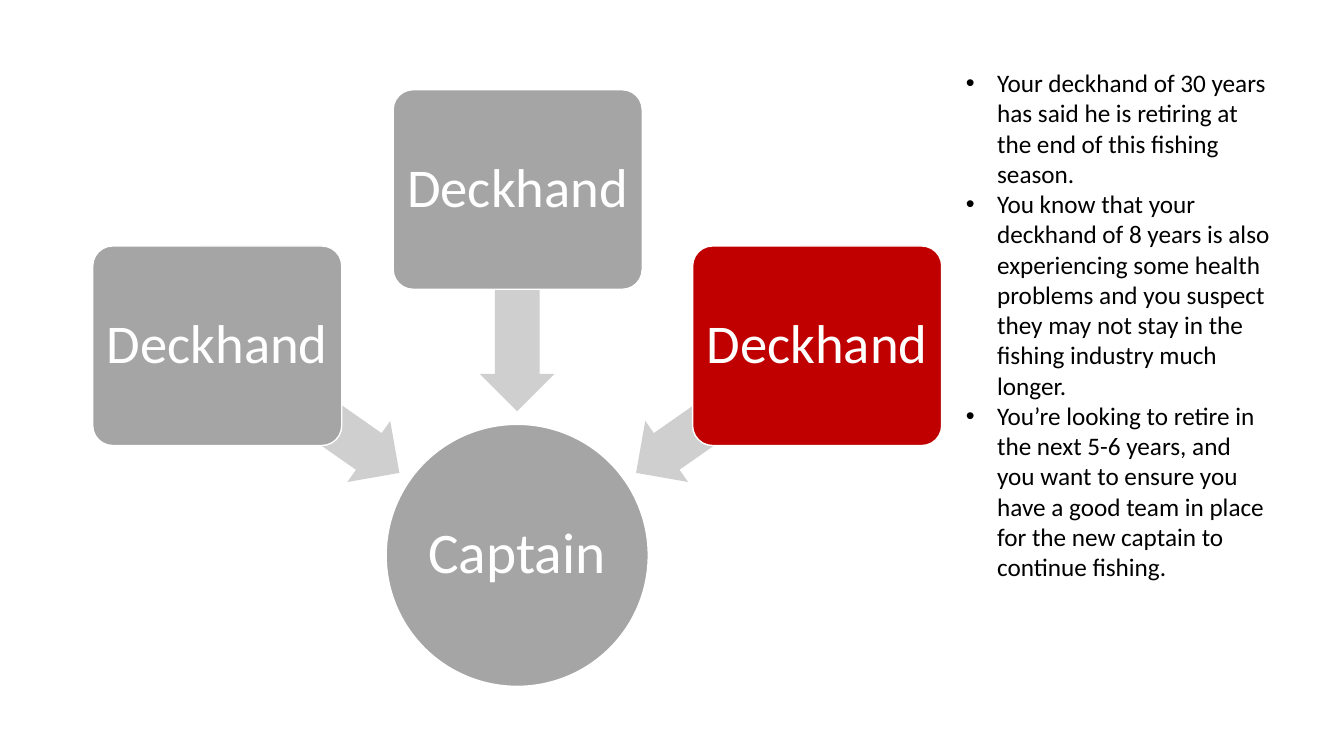
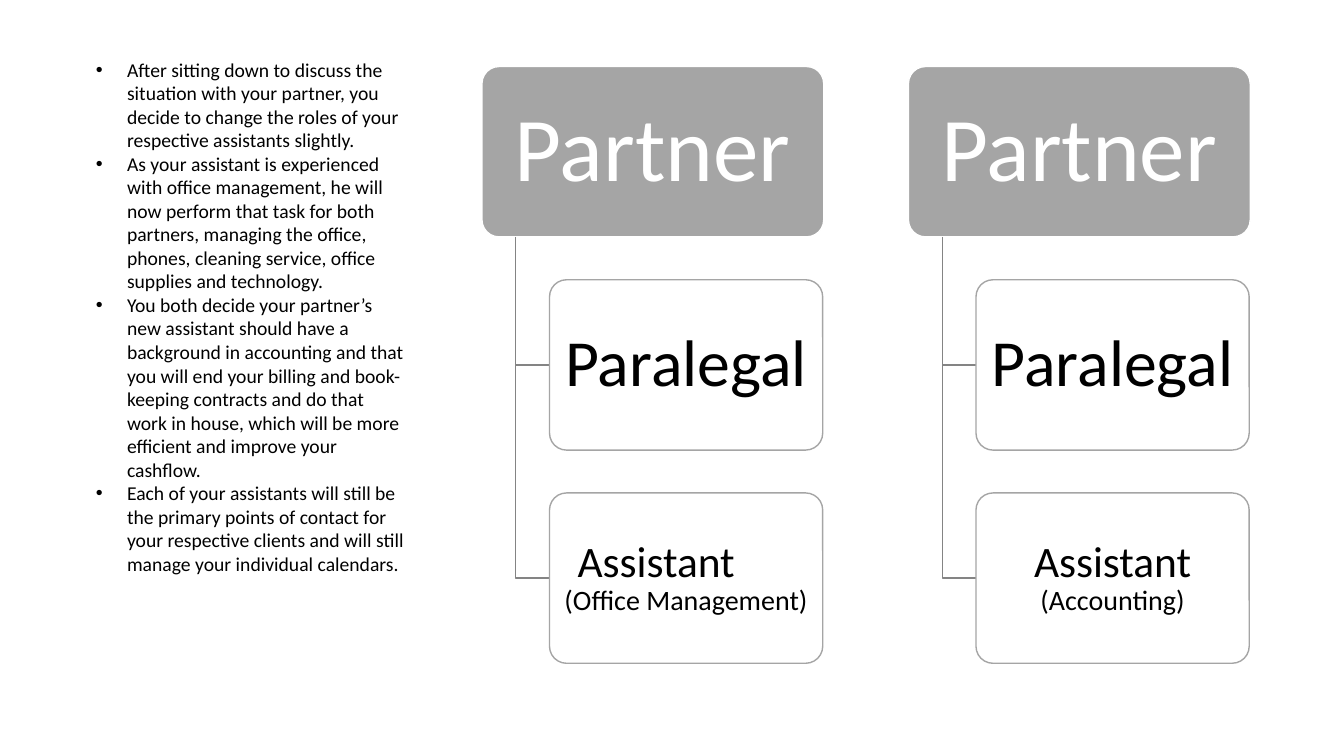
from pptx import Presentation
from pptx.dml.color import RGBColor
from pptx.enum.shapes import MSO_SHAPE
from pptx.enum.text import MSO_ANCHOR, MSO_AUTO_SIZE, PP_ALIGN
from pptx.util import Inches, Pt

COLORS = {
    "gray": "A5A5A5",
    "arrow": "CFCFCF",
    "red": "C00000",
    "elbow": "848484",
    "white": "FFFFFF",
    "black": "000000",
}
FONT = "Calibri"

deck = Presentation()
deck.slide_width = Inches(13.33)
deck.slide_height = Inches(7.5)


def add_list_page(frame, size, items):
    page = deck.slides.add_slide(deck.slide_layouts[1])
    title = page.shapes.title.element
    title.getparent().remove(title)
    body = page.placeholders[1]
    body.left, body.top, body.width, body.height = [Inches(v) for v in frame]
    body.text_frame.auto_size = MSO_AUTO_SIZE.NONE
    for index, item in enumerate(items):
        para = body.text_frame.paragraphs[0] if index == 0 else body.text_frame.add_paragraph()
        para.space_before = Pt(0)
        properties = para._p.get_or_add_pPr()
        properties.set("marL", str(Inches(0.31)))
        properties.set("indent", str(-Inches(0.31)))
        span = para.add_run()
        span.text = item
        span.font.name = FONT
        span.font.size = Pt(size)
        span.font.color.rgb = RGBColor.from_string(COLORS["black"])
    return page


def add_box(page, kind, frame, fill, line=None, lines=(), color="white"):
    box = page.shapes.add_shape(kind, *[Inches(v) for v in frame])
    box.shadow.inherit = False
    box.fill.solid()
    box.fill.fore_color.rgb = RGBColor.from_string(COLORS[fill])
    if line:
        box.line.color.rgb = RGBColor.from_string(COLORS[line])
        box.line.width = Pt(1)
    else:
        box.line.fill.background()
    if kind == MSO_SHAPE.ROUNDED_RECTANGLE:
        box.adjustments[0] = 0.1
    text = box.text_frame
    text.word_wrap = True
    text.vertical_anchor = MSO_ANCHOR.MIDDLE
    text.margin_left = text.margin_right = text.margin_top = text.margin_bottom = Inches(0.02)
    for index, (words, size) in enumerate(lines):
        para = text.paragraphs[0] if index == 0 else text.add_paragraph()
        para.alignment = PP_ALIGN.CENTER
        para.line_spacing = 0.9
        span = para.add_run()
        span.text = words
        span.font.name = FONT
        span.font.size = Pt(size)
        span.font.color.rgb = RGBColor.from_string(COLORS[color])
    return box


crew_page = add_list_page((9.48, 0.62, 3.22, 5.55), 18, [
    "Your deckhand of 30 years has said he is retiring at the end of this fishing season.",
    "You know that your deckhand of 8 years is also experiencing some health problems and you "
    "suspect they may not stay in the fishing industry much longer.",
    "You’re looking to retire in the next 5-6 years, and you want to ensure you have a good team "
    "in place for the new captain to continue fishing.",
])
add_box(crew_page, MSO_SHAPE.OVAL, (3.83, 4.21, 2.6, 2.6), "gray", "white", [("Captain", 41)])

crew = [
    (0.92, 2.44, "gray", 1.96, 3.69, 215),
    (3.9, 0.89, "gray", 4.03, 2.61, 270),
    (6.87, 2.44, "red", 6.11, 3.69, 325),
]
for left, top, fill, arrow_left, arrow_top, angle in crew:
    arrow = add_box(crew_page, MSO_SHAPE.LEFT_ARROW, (arrow_left, arrow_top, 2.2, 0.74), "arrow")
    arrow.adjustments[0] = 0.6
    arrow.adjustments[1] = 0.5
    arrow.rotation = angle
    add_box(crew_page, MSO_SHAPE.ROUNDED_RECTANGLE, (left, top, 2.47, 1.98), fill, "white",
            [("Deckhand", 39)])

office_page = add_list_page((0.85, 0.52, 3.26, 5.82), 14, [
    "After sitting down to discuss the situation with your partner, you decide to change the "
    "roles of your respective assistants slightly.",
    "As your assistant is experienced with office management, he will now perform that task for "
    "both partners, managing the office, phones, cleaning service, office supplies and technology.",
    "You both decide your partner’s new assistant should have a background in accounting and that "
    "you will end your billing and book-keeping contracts and do that work in house, which will "
    "be more efficient and improve your cashflow.",
    "Each of your assistants will still be the primary points of contact for your respective "
    "clients and will still manage your individual calendars.",
])

ROW_TOP, ROW_STEP, ROW_HEIGHT = 0.66, 2.115, 1.69
INDENT = 0.335
for left, duty in [(4.78, "(Office Management)"), (9.01, "(Accounting)")]:
    add_box(office_page, MSO_SHAPE.ROUNDED_RECTANGLE, (left, ROW_TOP, 3.39, ROW_HEIGHT),
            "gray", "white", [("Partner", 65)])
    roles = [[("Paralegal", 47)], [("Assistant", 31), (duty, 20)]]
    for row, lines in enumerate(roles, 1):
        top = ROW_TOP + row * ROW_STEP
        trunk, middle = Inches(left + INDENT), Inches(top + ROW_HEIGHT / 2)
        branch = Inches(left + 2 * INDENT)
        outline = office_page.shapes.build_freeform(trunk, Inches(ROW_TOP + ROW_HEIGHT))
        outline.add_line_segments([(trunk, middle), (branch, middle)], close=False)
        elbow = outline.convert_to_shape()
        elbow.shadow.inherit = False
        elbow.fill.background()
        elbow.line.color.rgb = RGBColor.from_string(COLORS["elbow"])
        elbow.line.width = Pt(1)
        role = add_box(office_page, MSO_SHAPE.ROUNDED_RECTANGLE,
                       (left + 2 * INDENT, top, 2.71, ROW_HEIGHT), "white", "gray", lines, "black")
        if duty == "(Office Management)" and row == 2:
            para = role.text_frame.paragraphs[0]
            para.alignment = PP_ALIGN.LEFT
            para._p.get_or_add_pPr().set("marL", str(Inches(0.21)))

deck.save("out.pptx")
